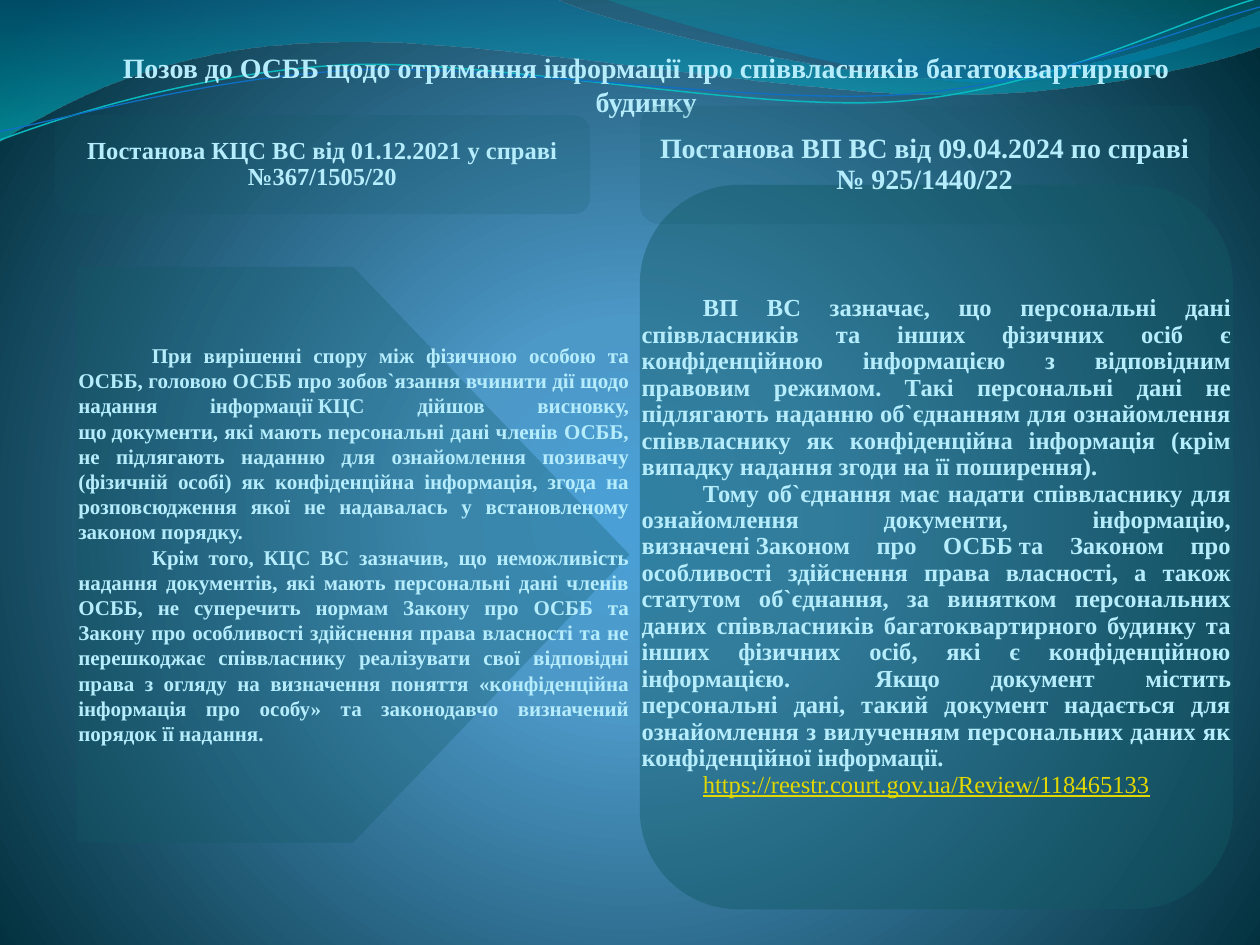
import lxml.etree
import pptx
import pptx.dml.color
import pptx.enum.shapes
import pptx.enum.text
import pptx.oxml.ns
import pptx.util

Pt = pptx.util.Pt
qn = pptx.oxml.ns.qn
RGBColor = pptx.dml.color.RGBColor
SHAPE = pptx.enum.shapes.MSO_SHAPE
ALIGN = pptx.enum.text.PP_ALIGN
ANCHOR = pptx.enum.text.MSO_ANCHOR
NBSP = chr(160)

THEME = {
    "font": "Times New Roman",
    "text": "B5EDFD",
    "link": "E2D700",
    "panel": "115964",
    "background": [(0, "4AA0D6", 100), (25, "4C98C7", 100), (100, "002C38", 100)],
    "wide wave": [(0, "0074A1", 45), (100, "00C6CF", 55)],
    "right wave": [(0, "00A1A9", 30), (80, "008BBF", 45)],
    "teal line": "0AB8BF",
    "blue line": "0F6FC6",
    "title size": 16,
    "left header size": 14,
    "right header size": 16,
    "left body size": 12,
    "right body size": 14,
}


def set_gradient(properties, stops, center=None):
    """Replace the fill by a vertical gradient, or a circular one around center."""
    old_fill = properties.find(qn("a:solidFill"))
    gradient = lxml.etree.Element(qn("a:gradFill"), rotWithShape="1")
    stop_list = lxml.etree.SubElement(gradient, qn("a:gsLst"))
    for position, color, opacity in stops:
        stop = lxml.etree.SubElement(stop_list, qn("a:gs"), pos=str(position * 1000))
        rgb = lxml.etree.SubElement(stop, qn("a:srgbClr"), val=color)
        if opacity < 100:
            lxml.etree.SubElement(rgb, qn("a:alpha"), val=str(opacity * 1000))
    if center:
        circle = lxml.etree.SubElement(gradient, qn("a:path"), path="circle")
        edges = {side: str(share * 1000) for side, share in center.items()}
        lxml.etree.SubElement(circle, qn("a:fillToRect"), **edges)
    else:
        lxml.etree.SubElement(gradient, qn("a:lin"), ang="5400000", scaled="0")
    properties.replace(old_fill, gradient)


def write_text(frame, paragraphs, size, align, anchor, margins, indent=0, spacing=1.0):
    """Fill the frame with paragraphs given as (text, run format) pairs."""
    left, top, right, bottom = margins
    frame_format = {
        "word_wrap": True, "auto_size": pptx.enum.text.MSO_AUTO_SIZE.NONE,
        "vertical_anchor": anchor, "margin_left": Pt(left), "margin_top": Pt(top),
        "margin_right": Pt(right), "margin_bottom": Pt(bottom),
    }
    for name, value in frame_format.items():
        setattr(frame, name, value)
    for index, (text, changes) in enumerate(paragraphs):
        paragraph = frame.paragraphs[0] if index == 0 else frame.add_paragraph()
        paragraph.alignment = align
        paragraph.line_spacing = spacing
        if indent:
            paragraph._p.get_or_add_pPr().set("indent", str(Pt(indent)))
        run = paragraph.add_run()
        run.text = text
        run_format = {"name": THEME["font"], "size": Pt(size), "bold": True, "color": THEME["text"]}
        run_format.update(changes)
        run.font.color.rgb = RGBColor.from_string(run_format.pop("color"))
        for name, value in run_format.items():
            setattr(run.font, name, value)


presentation = pptx.Presentation()
presentation.slide_width, presentation.slide_height = Pt(720), Pt(540)
slide = presentation.slides.add_slide(presentation.slide_layouts[5])
slide.background.fill.solid()
set_gradient(slide._element.find(".//" + qn("p:bgPr")), THEME["background"],
             {"l": 10, "t": 110, "r": 10, "b": 100})

# Waves: two numbers make a straight step, six a Bezier curve.
waves = [
    ("wide wave", None, (0, 0), [
        (317, -1), (343, 12, 478, 45, 546, 45), (614, 45, 690, 19, 720, 6), (721, 26),
        (708, 32, 626, 55, 537, 54), (448, 54, 275, 20, 185, 24), (93, 26, 33, 60, -1, 81)]),
    ("right wave", None, (345, -1), [
        (367, 8, 491, 45, 554, 47), (616, 50, 692, 23, 720, 15), (720, 0)]),
    ("teal line", 0.85, (0, 80), [
        (35, 67, 114, 41, 199, 37), (284, 34, 427, 64, 513, 58), (600, 51, 675, 11, 719, -1)]),
    ("blue line", 0.75, (0, 75), [
        (34, 69, 118, 44, 204, 40), (290, 37, 430, 60, 516, 54), (602, 48, 678, 15, 720, 4)]),
]
for color, line_width, start, steps in waves:
    builder = slide.shapes.build_freeform(Pt(start[0]), Pt(start[1]))
    builder.add_line_segments([(Pt(step[-2]), Pt(step[-1])) for step in steps],
                              close=line_width is None)
    wave = builder.convert_to_shape()
    wave.shadow.inherit = False
    segments = wave._element.findall(".//" + qn("a:lnTo"))
    for segment, step in zip(segments, steps):
        if len(step) == 2:
            continue
        curve = lxml.etree.Element(qn("a:cubicBezTo"))
        for x, y in zip(step[0::2], step[1::2]):
            lxml.etree.SubElement(curve, qn("a:pt"), x=str(Pt(x) - wave.left), y=str(Pt(y) - wave.top))
        segment.getparent().replace(segment, curve)
    if line_width is None:
        wave.line.fill.background()
        wave.fill.solid()
        set_gradient(wave._element.spPr, THEME[color])
    else:
        wave.fill.background()
        wave.line.width = Pt(line_width)
        wave.line.color.rgb = RGBColor.from_string(THEME[color])

title = slide.shapes.title
title.left, title.top, title.width, title.height = Pt(48), Pt(15), Pt(644), Pt(125)
write_text(title.text_frame,
           [("Позов до ОСББ щодо отримання інформації про співвласників багатоквартирного будинку", {})],
           THEME["title size"], ALIGN.CENTER, ANCHOR.TOP, (0, 14, 1.5, 0))

left_body = [
    ("При вирішенні спору між фізичною особою та ОСББ, головою ОСББ про зобов`язання вчинити дії "
     f"щодо надання інформації{NBSP}КЦС дійшов висновку, що{NBSP}документи, які мають персональні "
     "дані членів ОСББ, не підлягають наданню для ознайомлення позивачу (фізичній особі) як "
     "конфіденційна інформація, згода на розповсюдження якої не надавалась у встановленому "
     "законом порядку.", {}),
    ("Крім того, КЦС ВС зазначив, що неможливість надання документів, які мають персональні дані "
     "членів ОСББ, не суперечить нормам Закону про ОСББ та Закону про особливості здійснення права "
     "власності та не перешкоджає співвласнику реалізувати свої відповідні права з огляду на "
     "визначення поняття «конфіденційна інформація про особу» та законодавчо визначений порядок "
     "її надання.", {}),
]
right_body = [
    ("ВП ВС зазначає, що персональні дані співвласників та інших фізичних осіб є конфіденційною "
     "інформацією з відповідним правовим режимом. Такі персональні дані не підлягають наданню "
     "об`єднанням для ознайомлення співвласнику як конфіденційна інформація (крім випадку надання "
     "згоди на її поширення).", {}),
    ("Тому об`єднання має надати співвласнику для ознайомлення документи, інформацію, "
     f"визначені{NBSP}Законом про ОСББ{NBSP}та Законом про особливості здійснення права власності, "
     "а також статутом об`єднання, за винятком персональних даних співвласників багатоквартирного "
     "будинку та інших фізичних осіб, які є конфіденційною інформацією. \tЯкщо документ містить "
     "персональні дані, такий документ надається для ознайомлення з вилученням персональних даних "
     "як конфіденційної інформації.", {}),
    ("https://reestr.court.gov.ua/Review/118465133",
     {"color": THEME["link"], "bold": False, "underline": True}),
]
left_header = [("Постанова КЦС ВС від 01.12.2021 у справі №367/1505/20", {})]
right_header = [("Постанова ВП ВС від 09.04.2024 по справі № 925/1440/22", {})]

# Shape, box, opacity, text, size, alignment, margins, first-line indent, line spacing
panels = [
    (SHAPE.PENTAGON, (43.8, 152.5, 316, 329), 29, left_body, "left body size",
     ALIGN.JUSTIFY, (1, 1, 0, 13), 42, 1.0),
    (SHAPE.FLOWCHART_ALTERNATE_PROCESS, (365.6, 105.6, 339, 414), 44, right_body, "right body size",
     ALIGN.JUSTIFY, (1, 1, 1, 1), 35, 0.9),
    (SHAPE.ROUNDED_RECTANGLE, (31.2, 65.8, 306, 56.6), 17, left_header, "left header size",
     ALIGN.CENTER, (4, 4, 4, 4), 0, 0.9),
    (SHAPE.ROUNDED_RECTANGLE, (365.6, 60.4, 325.4, 67.7), 16, right_header, "right header size",
     ALIGN.CENTER, (5, 5, 5, 5), 0, 0.9),
]
for kind, box, opacity, text, size, align, margins, indent, spacing in panels:
    bounds = [Pt(value) for value in box]
    panel = slide.shapes.add_shape(kind, *bounds)
    panel.shadow.inherit = False
    panel.line.fill.background()
    panel.fill.solid()
    panel.fill.fore_color.rgb = RGBColor.from_string(THEME["panel"])
    rgb = panel._element.spPr.find(".//" + qn("a:srgbClr"))
    lxml.etree.SubElement(rgb, qn("a:alpha"), val=str(opacity * 1000))
    text_box = slide.shapes.add_textbox(*bounds)
    write_text(text_box.text_frame, text, THEME[size], align, ANCHOR.MIDDLE, margins, indent, spacing)

# The title lies above the waves and below the panels.
title_element = title._element
tree = title_element.getparent()
tree.remove(title_element)
tree.insert(tree.index(slide.shapes[len(waves)]._element), title_element)

presentation.save("out.pptx")
